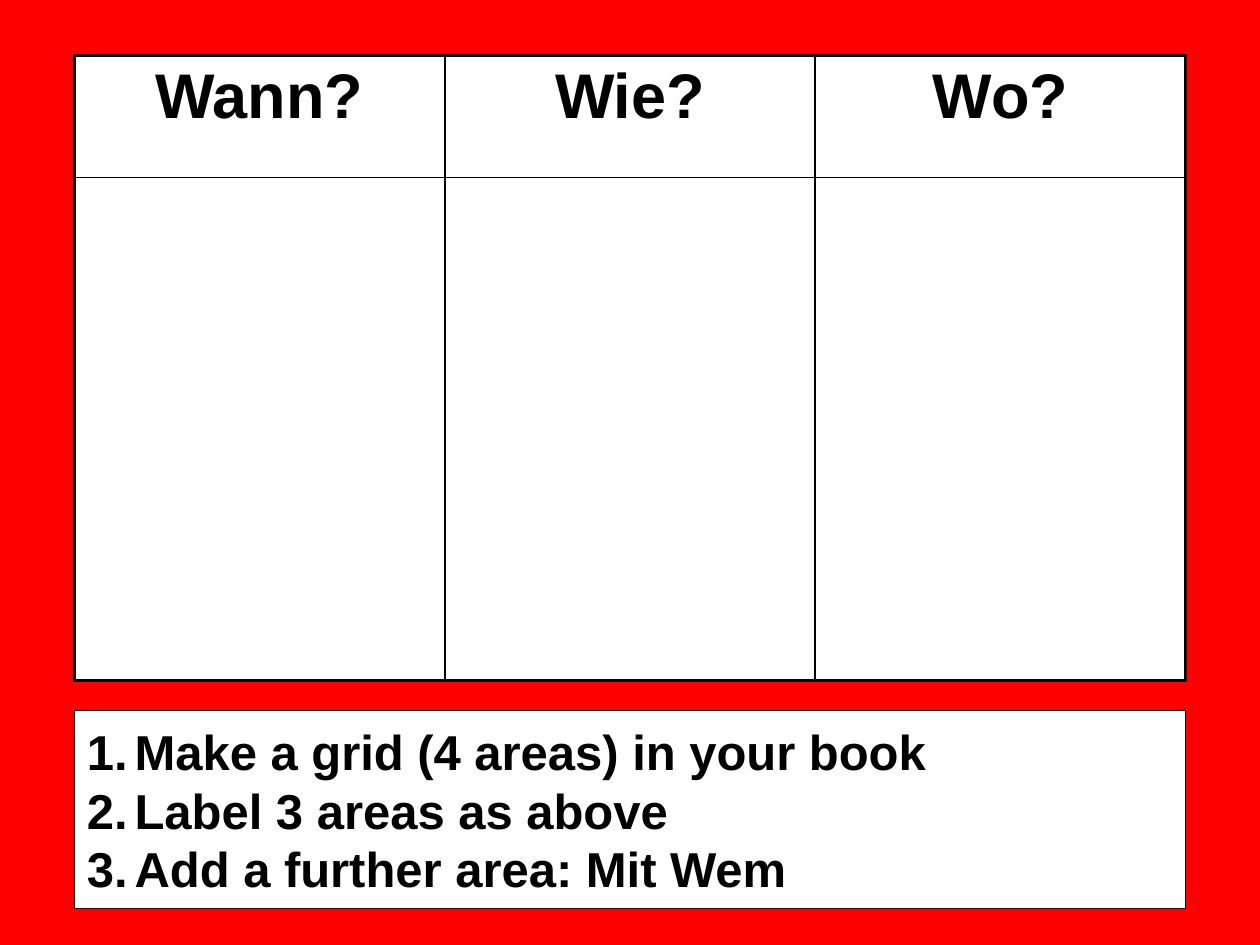
from lxml.etree import SubElement
from pptx import Presentation
from pptx.dml.color import RGBColor
from pptx.enum.shapes import MSO_SHAPE
from pptx.enum.text import MSO_ANCHOR, PP_ALIGN
from pptx.oxml.ns import qn
from pptx.util import Pt

PX = 9144  # EMU per px, 100 px to the inch
RED = RGBColor(0xFF, 0x00, 0x00)
WHITE = RGBColor(0xFF, 0xFF, 0xFF)
BLACK = RGBColor(0x00, 0x00, 0x00)

LEFT, WIDTH = 59, 882
HEADINGS = ["Wann?", "Wie?", "Wo?"]
ROW_HEIGHTS = [97, 399]
STEPS = [
    "Make a grid (4 areas) in your book",
    "Label 3 areas as above",
    "Add a further area: Mit Wem",
]


def write(paragraph, text, size, align=PP_ALIGN.LEFT):
    paragraph.alignment = align
    run = paragraph.add_run()
    run.text = text
    run.font.name = "Arial"
    run.font.size = Pt(size)
    run.font.bold = True
    run.font.color.rgb = BLACK


def add_border(cell, side, width):
    line = SubElement(cell._tc.get_or_add_tcPr(), qn(f"a:ln{side}"), w=str(Pt(width)))
    fill = SubElement(line, qn("a:solidFill"))
    SubElement(fill, qn("a:srgbClr"), val=str(BLACK))


presentation = Presentation()
presentation.slide_width = 1000 * PX
presentation.slide_height = 750 * PX
slide = presentation.slides.add_slide(presentation.slide_layouts[6])
slide.background.fill.solid()
slide.background.fill.fore_color.rgb = RED

# Question grid: thick outside border, thin inside lines
rows, columns = len(ROW_HEIGHTS), len(HEADINGS)
table = slide.shapes.add_table(
    rows, columns, LEFT * PX, 44 * PX, WIDTH * PX, sum(ROW_HEIGHTS) * PX
).table
for row, height in enumerate(ROW_HEIGHTS):
    table.rows[row].height = height * PX
    for column in range(columns):
        cell = table.cell(row, column)
        outside = {
            "L": column == 0,
            "R": column == columns - 1,
            "T": row == 0,
            "B": row == rows - 1,
        }
        for side, is_outside in outside.items():
            add_border(cell, side, 2.25 if is_outside else 1)
        cell.fill.solid()
        cell.fill.fore_color.rgb = WHITE

for column, heading in enumerate(HEADINGS):
    table.columns[column].width = WIDTH // columns * PX
    write(table.cell(0, column).text_frame.paragraphs[0], heading, 36, PP_ALIGN.CENTER)

# Numbered instructions
box = slide.shapes.add_shape(
    MSO_SHAPE.RECTANGLE, LEFT * PX, 564 * PX, WIDTH * PX, 157 * PX
)
box.shadow.inherit = False
box.fill.solid()
box.fill.fore_color.rgb = WHITE
box.line.color.rgb = BLACK
box.line.width = Pt(0.75)
text_frame = box.text_frame
text_frame.word_wrap = True
text_frame.vertical_anchor = MSO_ANCHOR.MIDDLE
for index, step in enumerate(STEPS):
    paragraph = text_frame.add_paragraph() if index else text_frame.paragraphs[0]
    write(paragraph, step, 28)
    properties = paragraph._p.get_or_add_pPr()
    properties.set("marL", str(38 * PX))
    properties.set("indent", str(-38 * PX))
    SubElement(properties, qn("a:buFont"), typeface="Arial")
    SubElement(properties, qn("a:buAutoNum"), type="arabicPeriod")

presentation.save("out.pptx")
